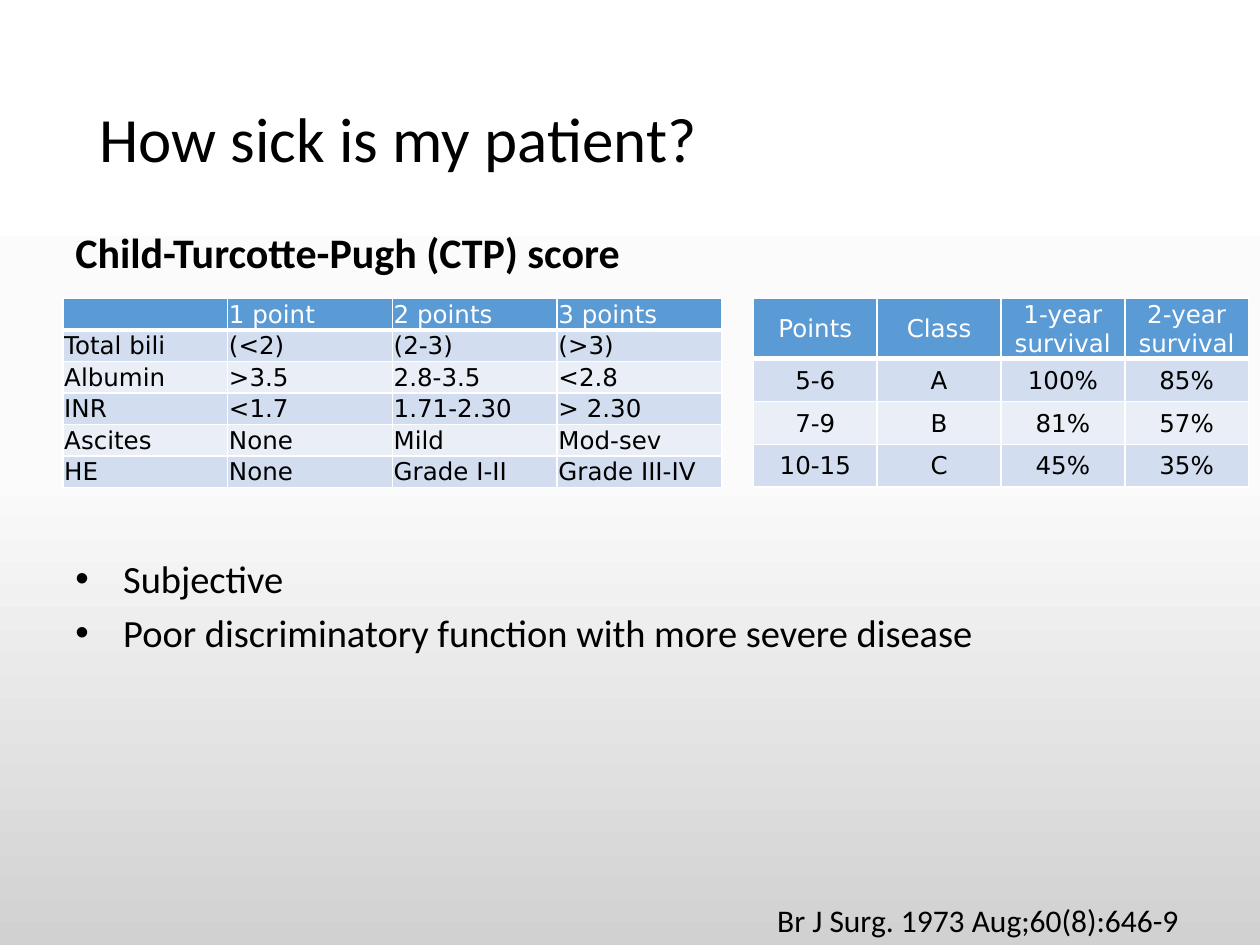
from lxml import etree
from pptx import Presentation
from pptx.dml.color import RGBColor
from pptx.enum.text import MSO_ANCHOR, MSO_AUTO_SIZE, PP_ALIGN
from pptx.oxml.ns import qn
from pptx.util import Inches, Pt

MIDDLE = MSO_ANCHOR.MIDDLE
LEFT, CENTER = PP_ALIGN.LEFT, PP_ALIGN.CENTER
FIT_SHAPE = MSO_AUTO_SIZE.SHAPE_TO_FIT_TEXT

COLORS = {
    "text": "000000",
    "white": "FFFFFF",
    "middle": "FBFBFB",
    "bottom": "D1D1D1",
    "header": "5B9BD5",
    "dark band": "D2DEEF",
    "light band": "EAEFF7",
}
TEXT_FONT = "Calibri"
TABLE_FONT = "DejaVu Sans"
TABLE_SIZE = 14
BULLET_INDENT = Inches(0.38)

SCORE_ROWS = [
    ["", "1 point", "2 points", "3 points"],
    ["Total bili", "(<2)", "(2-3)", "(>3)"],
    ["Albumin", ">3.5", "2.8-3.5", "<2.8"],
    ["INR", "<1.7", "1.71-2.30", "> 2.30"],
    ["Ascites", "None", "Mild", "Mod-sev"],
    ["HE", "None", "Grade I-II", "Grade III-IV"],
]
SURVIVAL_ROWS = [
    ["Points", "Class", "1-year survival", "2-year survival"],
    ["5-6", "A", "100%", "85%"],
    ["7-9", "B", "81%", "57%"],
    ["10-15", "C", "45%", "35%"],
]


def style_font(font, name, size, color="text", bold=False):
    """Set the face, size, colour and weight of a font."""
    font.name = name
    font.size = Pt(size)
    font.bold = bold
    font.color.rgb = RGBColor.from_string(COLORS[color])


def paint_background(page):
    """Fill the page with a white to grey vertical gradient."""
    fill = page.background.fill
    fill.gradient()
    fill.gradient_angle = 270
    stops = page._element.find(".//" + qn("a:gsLst"))
    for stop in list(stops):
        stops.remove(stop)
    for percent, color in ((0, "white"), (50, "middle"), (100, "bottom")):
        stop = etree.SubElement(stops, qn("a:gs"), pos=str(percent * 1000))
        etree.SubElement(stop, qn("a:srgbClr"), val=COLORS[color])


def add_text(page, left, top, width, height, text, size, bold=False, wrap=True):
    """Add a text box with one paragraph and return the box."""
    box = page.shapes.add_textbox(
        Inches(left), Inches(top), Inches(width), Inches(height))
    frame = box.text_frame
    frame.word_wrap = wrap
    frame.text = text
    style_font(frame.paragraphs[0].runs[0].font, TEXT_FONT, size, bold=bold)
    return box


def add_bullet(frame, text, size, space_before):
    """Append a bulleted paragraph to a text frame."""
    para = frame.add_paragraph()
    para.text = text
    para.space_before = Pt(space_before)
    properties = para._p.get_or_add_pPr()
    properties.set("marL", str(BULLET_INDENT))
    properties.set("indent", str(-BULLET_INDENT))
    etree.SubElement(properties, qn("a:buFont"), typeface="Arial")
    etree.SubElement(properties, qn("a:buChar"), char="•")
    style_font(para.runs[0].font, TEXT_FONT, size)


def add_borders(cell, bottom_width):
    """Give a cell white borders, with its own width at the bottom."""
    properties = cell._tc.get_or_add_tcPr()
    for side, width in (("L", 1), ("R", 1), ("T", 1), ("B", bottom_width)):
        line = etree.SubElement(properties, qn(f"a:ln{side}"), w=str(Pt(width)))
        fill = etree.SubElement(line, qn("a:solidFill"))
        etree.SubElement(fill, qn("a:srgbClr"), val=COLORS["white"])


def fill_cell(cell, text, row_index, align):
    """Write a cell and style it as a header or a banded body cell."""
    is_header = row_index == 0
    band = "dark band" if row_index % 2 else "light band"
    cell.text = text
    cell.vertical_anchor = MIDDLE
    cell.margin_left = cell.margin_right = cell.margin_top = Inches(0.01)
    cell.margin_bottom = 0
    add_borders(cell, 3 if is_header else 1)
    cell.fill.solid()
    cell.fill.fore_color.rgb = RGBColor.from_string(
        COLORS["header" if is_header else band])
    para = cell.text_frame.paragraphs[0]
    para.alignment = align
    para._p.get_or_add_endParaRPr().set("sz", str(TABLE_SIZE * 100))
    for span in para.runs:
        style_font(span.font, TABLE_FONT, TABLE_SIZE,
                   "white" if is_header else "text")


def add_grid(page, left, width, header_height, row_height, rows, align):
    """Add a table with equal columns and equal body rows."""
    heights = [header_height] + [row_height] * (len(rows) - 1)
    table = page.shapes.add_table(
        len(rows), len(rows[0]), Inches(left), Inches(2.37),
        Inches(width), Inches(sum(heights))).table
    for row_index, (values, height) in enumerate(zip(rows, heights)):
        table.rows[row_index].height = Inches(height)
        for column_index, value in enumerate(values):
            fill_cell(table.cell(row_index, column_index), value,
                      row_index, align)


def main():
    """Build the slide and save the deck."""
    deck = Presentation()
    deck.slide_width, deck.slide_height = Inches(10), Inches(7.5)
    page = deck.slides.add_slide(deck.slide_layouts[6])
    paint_background(page)

    title = add_text(page, 0.69, 0.4, 8.62, 1.45, "How sick is my patient?", 36)
    title.text_frame.vertical_anchor = MIDDLE
    title.text_frame.paragraphs[0].line_spacing = 0.9

    body = add_text(page, 0.5, 1.75, 8.73, 4.95,
                    "Child-Turcotte-Pugh (CTP) score", 24, bold=True)
    add_bullet(body.text_frame, "Subjective", 22, 159)
    add_bullet(body.text_frame,
               "Poor discriminatory function with more severe disease", 22, 4.4)

    citation = add_text(page, 6.07, 7.1, 3.43, 0.4,
                        "Br J Surg. 1973 Aug;60(8):646-9", 18, wrap=False)
    citation.text_frame.auto_size = FIT_SHAPE

    add_grid(page, 0.5, 5.23, 0.25, 0.25, SCORE_ROWS, LEFT)
    add_grid(page, 5.98, 3.93, 0.47, 0.34, SURVIVAL_ROWS, CENTER)
    deck.save("out.pptx")


if __name__ == "__main__":
    main()
